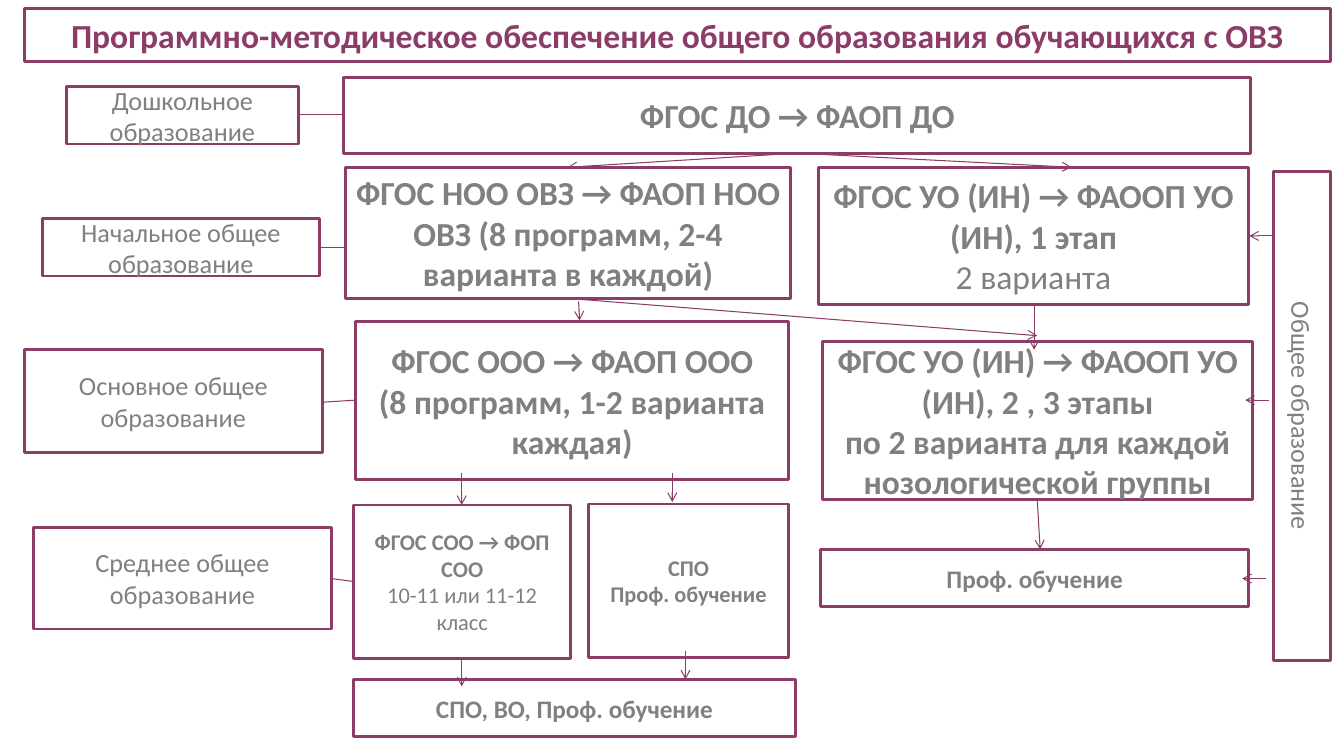
from dataclasses import dataclass

from lxml.etree import SubElement
from pptx import Presentation
from pptx.dml.color import RGBColor
from pptx.enum.shapes import MSO_CONNECTOR, MSO_SHAPE
from pptx.enum.text import MSO_ANCHOR, PP_ALIGN
from pptx.oxml.ns import qn
from pptx.util import Pt

COLORS = {"plum": "8B3C67", "gray": "808080", "white": "FFFFFF"}


@dataclass
class Box:
    left: float
    top: float
    width: float
    height: float
    lines: list[str]
    size: float = 24
    bold: int = 1  # number of leading bold paragraphs
    ink: str = "gray"
    turn: int = 0


@dataclass
class Link:
    x1: float
    y1: float
    x2: float
    y2: float
    arrow: bool = True


def color(name: str) -> RGBColor:
    return RGBColor.from_string(COLORS[name])


def draw_box(slide, box: Box) -> None:
    shape = slide.shapes.add_shape(
        MSO_SHAPE.RECTANGLE, Pt(box.left), Pt(box.top), Pt(box.width), Pt(box.height))
    shape.rotation = box.turn
    shape.shadow.inherit = False
    shape.fill.solid()
    shape.fill.fore_color.rgb = color("white")
    shape.line.color.rgb = color("plum")
    shape.line.width = Pt(2)
    frame = shape.text_frame
    frame.word_wrap = True
    frame.vertical_anchor = MSO_ANCHOR.MIDDLE
    frame.text = "\n".join(box.lines)
    for index, para in enumerate(frame.paragraphs):
        para.alignment = PP_ALIGN.CENTER
        for run in para.runs:
            run.font.name = "Calibri"
            run.font.size = Pt(box.size)
            run.font.bold = index < box.bold
            run.font.color.rgb = color(box.ink)


def draw_link(slide, link: Link) -> None:
    line = slide.shapes.add_connector(
        MSO_CONNECTOR.STRAIGHT, Pt(link.x1), Pt(link.y1), Pt(link.x2), Pt(link.y2))
    line.line.color.rgb = color("plum")
    line.line.width = Pt(0.75)
    if link.arrow:
        SubElement(line.line._get_or_add_ln(), qn("a:tailEnd"), type="arrow")
    SubElement(line._element.spPr, qn("a:effectLst"))


# Heading and the vertical bar at the right
FRAME = [
    Box(17.3, 5.8, 933.1, 38.2,
        ["Программно-методическое обеспечение общего образования обучающихся с ОВЗ"],
        ink="plum"),
    Box(755.3, 276.5, 349.2, 41, ["Общее образование"], 18.7, 0, turn=90),
]

# Education levels at the left
LEVELS = [
    Box(47.5, 61.9, 165.6, 41, ["Дошкольное образование"], 18.7, 0),
    Box(30.2, 156.2, 198, 41, ["Начальное общее образование"], 18.7, 0),
    Box(17.3, 249.8, 213.1, 73.4, ["Основное общее образование"], 18.7, 0),
    Box(23.8, 376.6, 213.1, 72.7, ["Среднее общее образование"], 18.7, 0),
]

# Standards and programmes
PLANS = [
    Box(245.5, 55.4, 648, 54, ["ФГОС ДО → ФАОП ДО"]),
    Box(247, 119.5, 317.5, 93.6,
        ["ФГОС НОО ОВЗ → ФАОП НОО ОВЗ (8 программ, 2-4 варианта в каждой)"]),
    Box(584.6, 119.5, 307.4, 97.9,
        ["ФГОС УО (ИН) → ФАООП УО (ИН), 1 этап", "2 варианта"]),
    Box(254.2, 229.7, 308.9, 113,
        ["ФГОС ООО → ФАОП ООО", "(8 программ, 1-2 варианта каждая)"], bold=2),
    Box(587.5, 244.1, 307.4, 113,
        ["ФГОС УО (ИН) → ФАООП УО (ИН), 2 , 3 этапы",
         "по 2 варианта для каждой нозологической группы"], bold=2),
    Box(252.7, 360.7, 154.8, 109.4,
        ["ФГОС СОО → ФОП СОО", "10-11 или 11-12 класс"], 16),
    Box(420.5, 360, 142.6, 109.4, ["СПО", "Проф. обучение"], 16, 2),
    Box(586.1, 392.4, 306, 41, ["Проф. обучение"], 18),
    Box(252.7, 485.3, 315.4, 41, ["СПО, ВО, Проф. обучение"], 18),
]

# Lines from levels to programmes
TIES = [
    Link(213.8, 82.1, 245.5, 82.1, False),
    Link(227.5, 177.1, 247, 177.1, False),
    Link(230.4, 287.3, 254.2, 285.8, False),
    Link(236.9, 413.3, 252.7, 415.4, False),
]

# Arrows down the chart; the first one lies behind the boxes
FIRST = Link(569.5, 109.4, 405.4, 119.5)
STEPS = [
    Link(569.5, 109.4, 765.4, 119.5),
    Link(413.3, 215.3, 414, 229),
    Link(414, 213.8, 740.9, 239.8),
    Link(738.7, 217.4, 738.7, 249.8),
    Link(329.8, 337.7, 329.8, 360.7),
    Link(480.2, 337.7, 480.2, 358.6),
    Link(740.9, 357.1, 743, 392.4),
    Link(329.8, 469.4, 329.8, 490.3),
    Link(489.6, 465.1, 489.6, 485.3),
]

# Arrows from the vertical bar
BACK = [Link(x, y, x - 17, y)
        for x, y in [(909.4, 168.5), (906.5, 285.8), (904.3, 413.3)]]


def main() -> None:
    deck = Presentation()
    deck.slide_width, deck.slide_height = Pt(960), Pt(540)
    slide = deck.slides.add_slide(deck.slide_layouts[6])
    draw_link(slide, FIRST)
    for box in FRAME + LEVELS + PLANS:
        draw_box(slide, box)
    for link in TIES + STEPS + BACK:
        draw_link(slide, link)
    deck.save("out.pptx")


if __name__ == "__main__":
    main()
